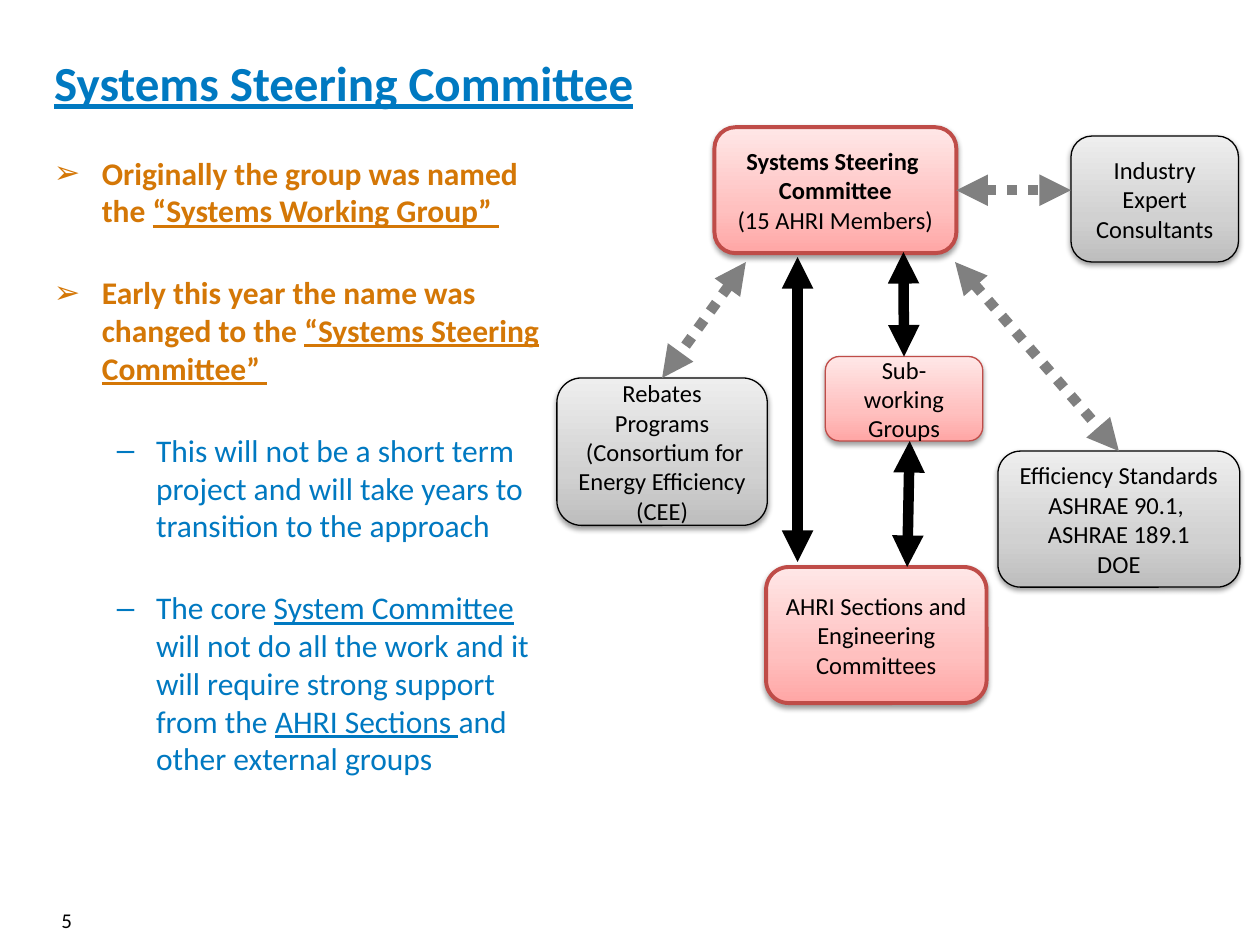
from dataclasses import dataclass
from typing import Optional

from lxml import etree
from pptx import Presentation
from pptx.dml.color import RGBColor
from pptx.enum.dml import MSO_LINE
from pptx.enum.shapes import MSO_CONNECTOR, MSO_SHAPE
from pptx.enum.text import MSO_ANCHOR, PP_ALIGN
from pptx.oxml.ns import qn
from pptx.util import Inches, Pt

ROUNDED = MSO_SHAPE.ROUNDED_RECTANGLE
STRAIGHT = MSO_CONNECTOR.STRAIGHT
DOTTED = MSO_LINE.ROUND_DOT
MIDDLE = MSO_ANCHOR.MIDDLE
LEFT, CENTER, RIGHT = PP_ALIGN.LEFT, PP_ALIGN.CENTER, PP_ALIGN.RIGHT

BLUE = RGBColor(0x00, 0x79, 0xC1)
ORANGE = RGBColor(0xD4, 0x77, 0x06)
BLACK = RGBColor(0x00, 0x00, 0x00)
GRAY = RGBColor(0x80, 0x80, 0x80)
RED = RGBColor(0xBF, 0x4C, 0x48)
PINK_FILL = ("FFA6A5", "FFC0BF", "FFE7E7")
GRAY_FILL = ("BDBDBD", "D1D1D1", "EEEEEE")
FILL_STOPS = (0, 35, 100)
FONT = "Calibri"
TOP, SIDE_RIGHT = 0, 3


@dataclass
class Group:
    text: str
    left: float
    top: float
    width: float
    height: float
    internal: bool = False
    border: float = 0.75
    bold_heading: bool = False


@dataclass
class Link:
    start: tuple[float, float]
    end: tuple[float, float]
    external: bool = False
    start_joint: Optional[tuple[str, int]] = None
    end_joint: Optional[tuple[str, int]] = None


@dataclass
class Point:
    phrases: list[tuple[str, bool]]  # text, underlined
    sub: bool = False


GROUPS = {
    "steering": Group("Systems Steering \vCommittee\n(15 AHRI Members)",
                      5.67, 1.01, 1.92, 1, True, 2.25, True),
    "sections": Group("AHRI Sections and Engineering Committees",
                      6.08, 4.5, 1.75, 1.08, True, 2.25),
    "experts": Group("Industry Expert Consultants", 8.5, 1.08, 1.33, 1),
    "standards": Group("Efficiency Standards\vASHRAE 90.1, \vASHRAE 189.1\vDOE",
                       7.92, 3.58, 1.92, 1.08),
    "rebates": Group("Rebates Programs\v (Consortium for Energy Efficiency (CEE)",
                     4.42, 3, 1.67, 1.17),
    "subgroups": Group("Sub-working Groups", 6.55, 2.83, 1.25, 0.67, True),
}

LINKS = [
    Link((6.33, 2.04), (6.33, 4.46)),
    Link((7.58, 1.51), (8.5, 1.51), True, start_joint=("steering", SIDE_RIGHT)),
    Link((7.58, 2.08), (8.88, 3.58), True, end_joint=("standards", TOP)),
    Link((5.92, 2.08), (5.25, 3), True, end_joint=("rebates", TOP)),
    Link((7.17, 2), (7.18, 2.83), end_joint=("subgroups", TOP)),
    Link((7.22, 3.5), (7.2, 4.5)),
]

POINTS = [
    Point([("Originally the group was named the ", False),
           ("“Systems Working Group” ", True)]),
    Point([("Early this year the name was changed to the ", False),
           ("“Systems Steering Committee” ", True)]),
    Point([("This will not be a short term project and will take years to "
            "transition to the approach", False)], sub=True),
    Point([("The core ", False), ("System Committee ", True),
           ("will not do all the work and it will require strong support from the ", False),
           ("AHRI Sections ", True), ("and other external groups", False)], sub=True),
]


def format_run(run, size: float, color: RGBColor, bold=False, underline=False) -> None:
    font = run.font
    font.name, font.size, font.bold, font.underline = FONT, Pt(size), bold, underline
    font.color.rgb = color


def add_color(parent, value: str):
    return etree.SubElement(parent, qn("a:srgbClr"), val=value)


def add_group(shapes, group: Group):
    box = shapes.add_shape(ROUNDED, Inches(group.left), Inches(group.top),
                           Inches(group.width), Inches(group.height))
    # Three-stop fill, dark at the bottom
    box.fill.gradient()
    box.fill.gradient_angle = 90
    stops = box._element.spPr.find(qn("a:gradFill")).find(qn("a:gsLst"))
    for stop in list(stops):
        stops.remove(stop)
    for position, value in zip(FILL_STOPS, PINK_FILL if group.internal else GRAY_FILL):
        add_color(etree.SubElement(stops, qn("a:gs"), pos=str(position * 1000)), value)
    box.line.color.rgb = RED if group.internal else BLACK
    box.line.width = Pt(group.border)
    # Soft shadow straight below
    box.shadow.inherit = False
    effects = box._element.spPr.find(qn("a:effectLst"))
    shadow = etree.SubElement(effects, qn("a:outerShdw"), blurRad=str(Pt(3.1)),
                              dist=str(Pt(1.6)), dir="5400000", rotWithShape="0")
    etree.SubElement(add_color(shadow, "000000"), qn("a:alpha"), val="38000")
    # Label
    frame = box.text_frame
    frame.word_wrap, frame.vertical_anchor = True, MIDDLE
    frame.text = group.text
    for index, paragraph in enumerate(frame.paragraphs):
        paragraph.alignment = CENTER
        for run in paragraph.runs:
            format_run(run, 14, BLACK, bold=group.bold_heading and index == 0)
        for line_break in paragraph._p.findall(qn("a:br")):
            etree.SubElement(line_break, qn("a:rPr"), sz="1400")
    return box


def add_link(shapes, link: Link, boxes: dict) -> None:
    arrow = shapes.add_connector(STRAIGHT, *map(Inches, link.start + link.end))
    if link.start_joint:
        name, side = link.start_joint
        arrow.begin_connect(boxes[name], side)
    if link.end_joint:
        name, side = link.end_joint
        arrow.end_connect(boxes[name], side)
    arrow.line.color.rgb = GRAY if link.external else BLACK
    arrow.line.width = Pt(6)
    if link.external:
        arrow.line.dash_style = DOTTED
    outline = arrow._element.spPr.find(qn("a:ln"))
    for end in ("a:headEnd", "a:tailEnd"):
        etree.SubElement(outline, qn(end), type="triangle")
    etree.SubElement(arrow._element.spPr, qn("a:effectLst"))


def fill_point(paragraph, point: Point, first: bool) -> None:
    margin, hanging, mark = (0.81, 0.31, "–") if point.sub else (0.38, 0.38, "➢")
    paragraph.level = int(point.sub)
    paragraph.space_before = Pt(0 if first else 25.2)
    properties = paragraph._p.get_or_add_pPr()
    properties.set("marL", str(Inches(margin)))
    properties.set("indent", str(-Inches(hanging)))
    etree.SubElement(properties, qn("a:buFont"), typeface="Arial")
    etree.SubElement(properties, qn("a:buChar"), char=mark)
    for text, underlined in point.phrases:
        run = paragraph.add_run()
        run.text = text
        format_run(run, 18, BLUE if point.sub else ORANGE, not point.sub, underlined)


def main() -> None:
    deck = Presentation()
    deck.slide_width, deck.slide_height = Inches(10), Inches(7.5)
    slide = deck.slides.add_slide(deck.slide_layouts[5])
    shapes = slide.shapes

    # Title
    title = shapes.title
    title.left, title.top = Inches(0.33), Inches(0.3)
    title.width, title.height = Inches(9.33), Inches(0.7)
    title.text_frame.text = "Systems Steering Committee"
    title.text_frame.vertical_anchor = MIDDLE
    heading = title.text_frame.paragraphs[0]
    heading.alignment = LEFT
    format_run(heading.runs[0], 28, BLUE, bold=True, underline=True)

    # Background points
    history = shapes.add_textbox(Inches(0.33), Inches(1.17), Inches(4.08), Inches(5.17)).text_frame
    history.word_wrap = True
    for index, point in enumerate(POINTS):
        paragraph = history.add_paragraph() if index else history.paragraphs[0]
        fill_point(paragraph, point, index == 0)

    # Page number
    page = shapes.add_textbox(0, Inches(7.1), Inches(0.67), Inches(0.4)).text_frame
    page.word_wrap, page.vertical_anchor = True, MIDDLE
    page.text = "5"
    page.paragraphs[0].alignment = RIGHT
    format_run(page.paragraphs[0].runs[0], 12, BLACK)

    # Organisation diagram
    boxes = {name: add_group(shapes, group) for name, group in GROUPS.items()}
    for link in LINKS:
        add_link(shapes, link, boxes)

    deck.save("out.pptx")


if __name__ == "__main__":
    main()
